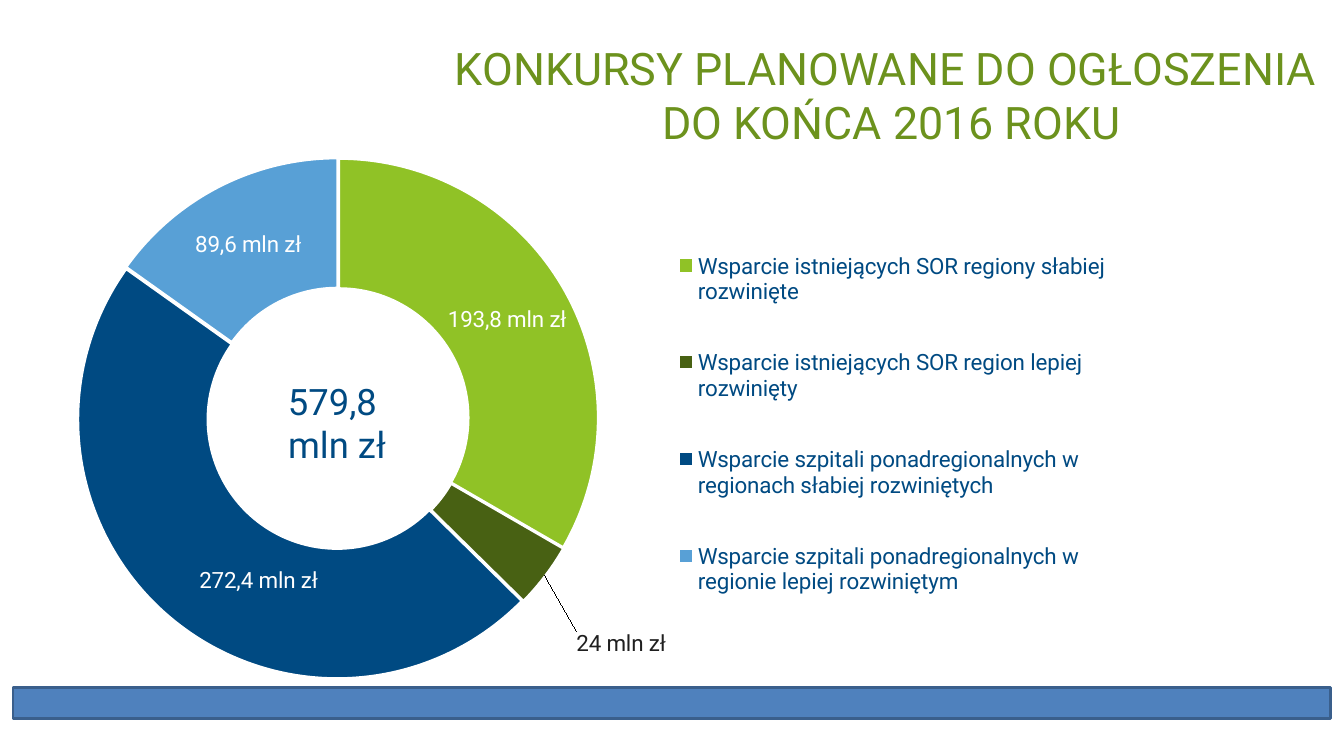
from lxml.etree import SubElement
from pptx import Presentation
from pptx.chart.data import CategoryChartData
from pptx.dml.color import RGBColor
from pptx.enum.chart import XL_CHART_TYPE as ChartType, XL_LEGEND_POSITION as LegendPosition
from pptx.enum.shapes import MSO_SHAPE as Shape
from pptx.enum.text import MSO_ANCHOR as Anchor, PP_ALIGN as Align
from pptx.oxml import parse_xml
from pptx.oxml.ns import nsdecls, qn
from pptx.util import Cm, Pt

FONT = "Roboto"
NAVY = "004A82"
WHITE = "FFFFFF"
SLICES = [
    ("Wsparcie istniejących SOR regiony słabiej rozwinięte", 33, "193,8 mln zł", "90C226", WHITE, None),
    ("Wsparcie istniejących SOR region lepiej rozwinięty", 4, "24 mln zł", "486113", "1F1F1F", (0.11, 0.17)),
    ("Wsparcie szpitali ponadregionalnych w regionach słabiej rozwiniętych", 47, "272,4 mln zł", NAVY, WHITE, (0.04, 0.02)),
    ("Wsparcie szpitali ponadregionalnych w regionie lepiej rozwiniętym", 15, "89,6 mln zł", "58A0D6", WHITE, None),
]


def color(value):
    return RGBColor.from_string(value)


def set_font(font, size, value):
    font.name = FONT
    font.size = Pt(size)
    font.color.rgb = color(value)


def add_text(slide, box, text, size, value):
    frame = slide.shapes.add_textbox(*map(Cm, box)).text_frame
    frame.word_wrap = True
    frame.vertical_anchor = Anchor.MIDDLE
    paragraph = frame.paragraphs[0]
    paragraph.text = text
    paragraph.alignment = Align.CENTER
    set_font(paragraph.font, size, value)


def add_bar(slide, box, fill, line):
    bar = slide.shapes.add_shape(Shape.FLOWCHART_PROCESS, *map(Cm, box))
    bar.shadow.inherit = False
    bar.fill.solid()
    bar.fill.fore_color.rgb = color(fill)
    bar.line.color.rgb = color(line)
    bar.line.width = Pt(2)


def manual_layout(settings):
    layout = parse_xml(f"<c:layout {nsdecls('c')}><c:manualLayout/></c:layout>")
    for tag, value in settings.items():
        SubElement(layout[0], qn(f"c:{tag}")).set("val", str(value))
    return layout


def frame_layout(x, y, w, h):
    return dict(xMode="edge", yMode="edge", x=x, y=y, w=w, h=h)


def explosion(value):
    return parse_xml(f'<c:explosion {nsdecls("c")} val="{value}"/>')


def style_slice(series, index, label, fill, label_color, offset):
    point = series.points[index]
    point.format.fill.solid()
    point.format.fill.fore_color.rgb = color(fill)
    point.format.line.color.rgb = color(WHITE)
    point.format.line.width = Pt(1.5)
    point_properties = series._element.findall(qn("c:dPt"))[index].find(qn("c:spPr"))
    point_properties.addprevious(explosion(1))
    frame = point.data_label.text_frame
    frame.text = label
    set_font(frame.paragraphs[0].font, 16, label_color)
    if offset:
        label_element = series._element.find(qn("c:dLbls")).findall(qn("c:dLbl"))[index]
        label_element.insert(1, manual_layout(dict(x=offset[0], y=offset[1])))


def add_doughnut(slide, box):
    data = CategoryChartData()
    data.categories = [name for name, *_ in SLICES]
    data.add_series("Series 1", [value for _, value, *_ in SLICES])
    chart = slide.shapes.add_chart(ChartType.DOUGHNUT, *map(Cm, box), data).chart
    chart.has_title = False
    set_font(chart.font, 10, "000000")

    plot = chart.plots[0]
    plot.vary_by_categories = True
    plot._element.find(qn("c:holeSize")).set("val", "36")
    plot_area = chart._chartSpace.chart.plotArea
    for layout in plot_area.findall(qn("c:layout")):
        plot_area.remove(layout)
    plot_area.insert(0, manual_layout(dict(layoutTarget="inner", **frame_layout(0.07, 0.055, 0.475, 0.9))))

    series = plot.series[0]
    labels = series.data_labels
    labels.show_percentage = True
    set_font(labels.font, 16, WHITE)
    labels._element.find(qn("c:showLeaderLines")).set("val", "1")
    for index, (_, _, *style) in enumerate(SLICES):
        style_slice(series, index, *style)
    series._element.find(qn("c:dPt")).addprevious(explosion(13))

    chart.has_legend = True
    legend = chart.legend
    legend.position = LegendPosition.RIGHT
    legend.include_in_layout = False
    set_font(legend.font, 16, NAVY)
    for layout in legend._element.findall(qn("c:layout")):
        legend._element.remove(layout)
    legend._element.find(qn("c:legendPos")).addnext(manual_layout(frame_layout(0.59, 0.17, 0.39, 0.69)))


def main():
    presentation = Presentation()
    presentation.slide_width = Cm(33.87)
    presentation.slide_height = Cm(19.05)
    slide = presentation.slides.add_slide(presentation.slide_layouts[6])
    add_text(slide, (10.06, 0.7, 24.82, 3.35), "KONKURSY PLANOWANE DO OGŁOSZENIA \vDO KOŃCA 2016 ROKU", 32, "6C921D")
    add_doughnut(slide, (-0.48, 2.54, 29.26, 15.85))
    add_text(slide, (6.22, 9.4, 4.55, 2.49), "579,8 \vmln zł", 26, NAVY)
    add_bar(slide, (0.33, 17.32, 33.2, 0.79), "4F81BD", "3A5F8C")
    presentation.save("out.pptx")


if __name__ == "__main__":
    main()
